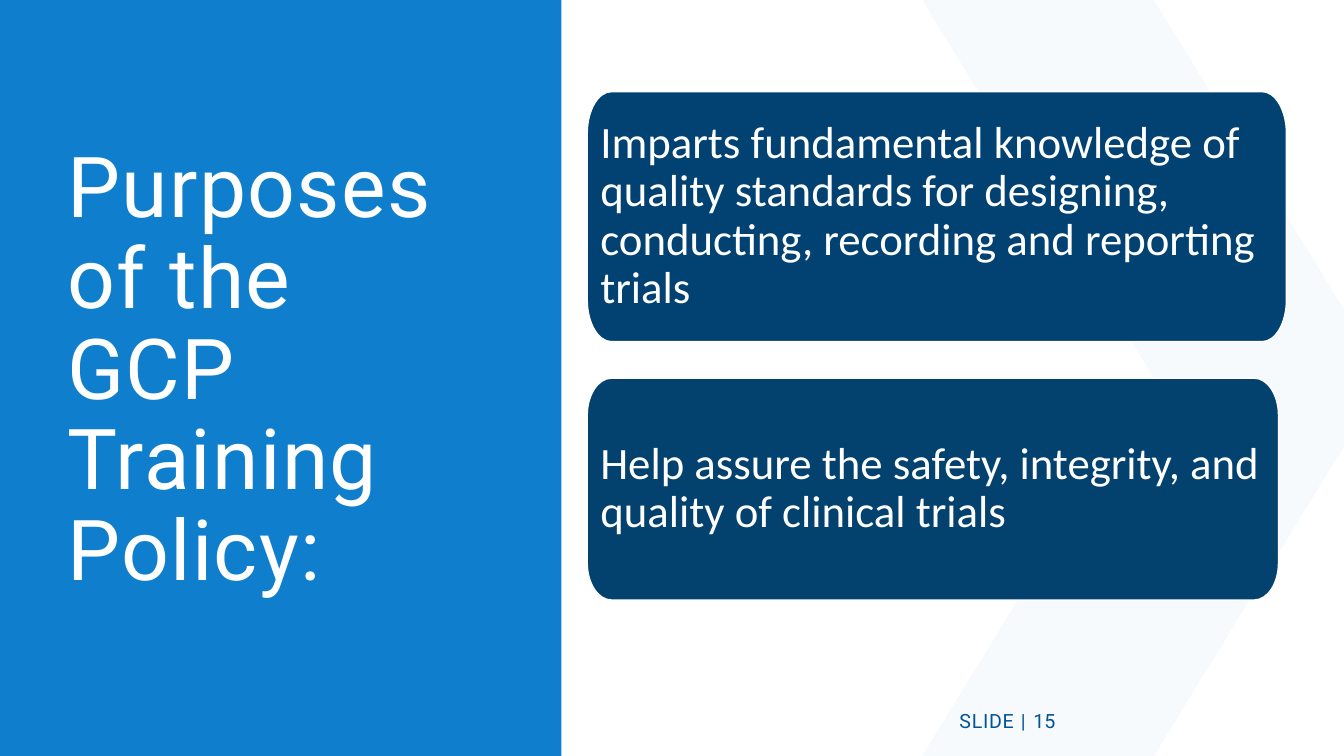
from lxml.etree import SubElement
from pptx import Presentation
from pptx.dml.color import RGBColor
from pptx.enum.shapes import MSO_SHAPE as Preset
from pptx.enum.text import MSO_ANCHOR as Anchor, PP_ALIGN as Align
from pptx.oxml.ns import qn
from pptx.util import Cm, Pt

COLORS = {
    "white": "FFFFFF",
    "panel": "0F7FCD",
    "chevron": "0F7FC9",
    "first_card": "014273",
    "second_card": "03416F",
    "footer": "015396",
}
WIDTH, HEIGHT = 33.87, 19.05
CURVE = 0.55
CARDS = [
    ((14.8, 2.31, 17.62, 6.3), "first_card",
     "Imparts fundamental knowledge of quality standards for designing, "
     "conducting, recording and reporting trials"),
    ((14.8, 9.53, 17.42, 5.59), "second_card",
     "Help assure the safety, integrity, and quality of clinical trials"),
]


def color(name):
    """Return the named colour."""
    return RGBColor.from_string(COLORS[name])


def fill_shape(shape, name):
    """Give a shape a flat fill without line or shadow."""
    shape.shadow.inherit = False
    shape.fill.solid()
    shape.fill.fore_color.rgb = color(name)
    shape.line.fill.background()


def format_run(run, font_name, size, color_name, spacing=0):
    """Set the font, size, colour and letter spacing of a run."""
    run.font.name = font_name
    run.font.size = Pt(size)
    run.font.color.rgb = color(color_name)
    if spacing:
        run._r.get_or_add_rPr().set("spc", str(int(spacing * 100)))


def add_outline(slide, points):
    """Add a closed freeform through points given in centimetres."""
    corners = [(Cm(x), Cm(y)) for x, y in points]
    builder = slide.shapes.build_freeform(*corners[0])
    builder.add_line_segments(corners[1:], close=True)
    return builder.convert_to_shape()


def add_text_box(slide, box):
    """Add a wrapping, vertically centred text box and return its frame."""
    frame = slide.shapes.add_textbox(*map(Cm, box)).text_frame
    frame.word_wrap = True
    frame.vertical_anchor = Anchor.MIDDLE
    return frame


def add_chevron(slide, box):
    """Draw the pale chevron whose tip is cut off by the slide edge."""
    left, top, width, height = box
    shoulder, right = left + 5.84, left + width
    middle, bottom = top + height / 2, top + height
    shape = add_outline(slide, [
        (left, top), (shoulder, top), (right, middle - 1.73),
        (right, middle + 1.73), (shoulder, bottom), (left, bottom),
        (shoulder, middle),
    ])
    fill_shape(shape, "chevron")
    fill_color = shape._element.spPr.find(qn("a:solidFill"))[0]
    SubElement(fill_color, qn("a:alpha")).set("val", "3000")


def add_title_panel(slide, box):
    """Draw the blue panel with the slide title."""
    left, top, width, height = box
    panel = slide.shapes.add_shape(Preset.RECTANGLE, *map(Cm, box))
    fill_shape(panel, "panel")
    frame = add_text_box(slide, (left + 1.45, top + 1.73, width - 3.58, height - 3.76))
    frame.text = "Purposes of the GCP Training Policy:"
    paragraph = frame.paragraphs[0]
    paragraph.line_spacing = 0.9
    format_run(paragraph.runs[0], "Roboto", 60, "white", 1)


def point_of(segment):
    """Return the end point of an outline segment."""
    point = segment[-1]
    return int(point.get("x")), int(point.get("y"))


def bend_corners(shape):
    """Turn every second segment of an eight-point outline into a curve."""
    outline = shape._element.spPr
    segments = [next(outline.iter(qn("a:moveTo"))), *outline.iter(qn("a:lnTo"))]
    pairs = list(zip(segments, segments[1:]))[::2]
    for index, (before, segment) in enumerate(pairs):
        start, end = point_of(before), point_of(segment)
        corner = (start[0], end[1]) if index % 2 == 0 else (end[0], start[1])
        segment.tag = qn("a:cubicBezTo")
        controls = [
            [round(a + CURVE * (c - a)) for a, c in zip(anchor, corner)]
            for anchor in (start, end)
        ]
        for position, (x, y) in enumerate(controls):
            control = SubElement(segment, qn("a:pt"), x=str(x), y=str(y))
            segment.insert(position, control)


def add_card(slide, box, fill_name, text):
    """Draw one rounded card with its statement."""
    left, top, width, height = box
    right, bottom = left + width, top + height
    radius_x, radius_y = 0.61, height / 6
    shape = add_outline(slide, [
        (left, top + radius_y), (left + radius_x, top),
        (right - radius_x, top), (right, top + radius_y),
        (right, bottom - radius_y), (right - radius_x, bottom),
        (left + radius_x, bottom), (left, bottom - radius_y),
    ])
    bend_corners(shape)
    fill_shape(shape, fill_name)
    shape.line.color.rgb = color("white")
    shape.line.width = Pt(1)
    frame = shape.text_frame
    frame.word_wrap = True
    frame.vertical_anchor = Anchor.MIDDLE
    frame.margin_left = frame.margin_right = Cm(0.33)
    frame.margin_top = frame.margin_bottom = Cm(0.33)
    frame.text = text
    paragraph = frame.paragraphs[0]
    paragraph.alignment = Align.LEFT
    paragraph.line_spacing = 0.9
    format_run(paragraph.runs[0], "Calibri", 32, "white")


def add_footer(slide, box):
    """Write the slide number."""
    paragraph = add_text_box(slide, box).paragraphs[0]
    paragraph.space_after = Pt(6)
    for text, spacing in [("SLIDE", 0.5), (" | ", 1), ("15", 0)]:
        run = paragraph.add_run()
        run.text = text
        format_run(run, "Roboto", 14, "footer", spacing)


def main():
    """Build and save the slide."""
    presentation = Presentation()
    presentation.slide_width, presentation.slide_height = Cm(WIDTH), Cm(HEIGHT)
    slide = presentation.slides.add_slide(presentation.slide_layouts[6])
    add_chevron(slide, (23.24, 0, WIDTH - 23.24, HEIGHT))
    add_title_panel(slide, (0, 0, 14.15, HEIGHT))
    for box, fill_name, text in CARDS:
        add_card(slide, box, fill_name, text)
    add_footer(slide, (23.93, 17.65, 7.62, 1.02))
    presentation.save("out.pptx")


if __name__ == "__main__":
    main()
